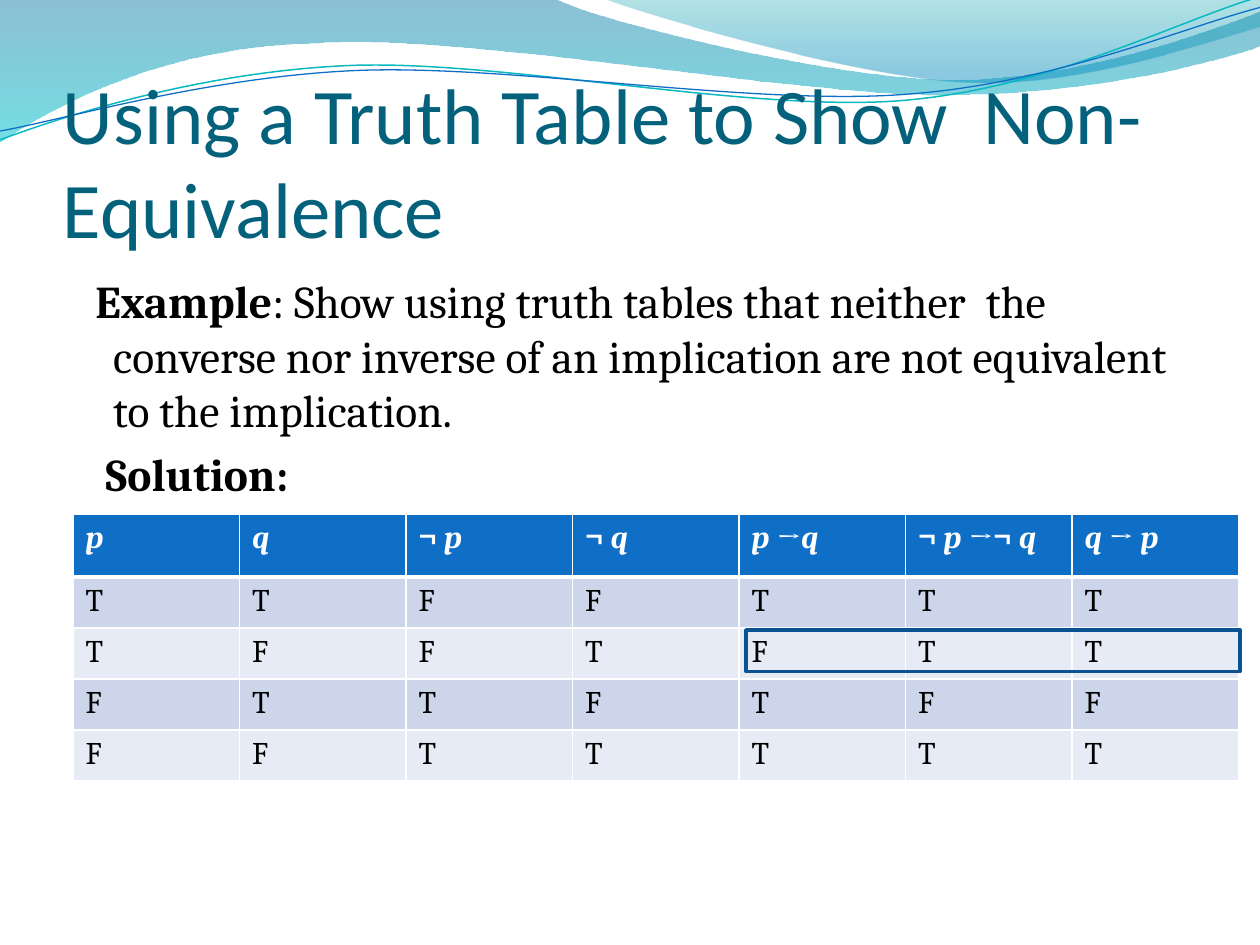
from dataclasses import dataclass
from itertools import product
from math import cos, radians, sin

from lxml import etree
from pptx import Presentation
from pptx.dml.color import RGBColor
from pptx.enum.shapes import MSO_SHAPE
from pptx.enum.text import MSO_ANCHOR
from pptx.oxml.ns import qn
from pptx.util import Inches, Pt

RECT = MSO_SHAPE.RECTANGLE
BOTTOM = MSO_ANCHOR.BOTTOM
TOP = MSO_ANCHOR.TOP


@dataclass(frozen=True)
class Theme:
    head: str = "Calibri"
    body: str = "Cambria"
    title: str = "04617B"
    ink: str = "000000"
    white: str = "FFFFFF"
    blue: str = "0F6FC6"
    teal: str = "0AB8BF"
    frame: str = "0B5292"
    bands: tuple = ("CCD5EA", "E7EBF5")
    wave: tuple = ((0, "0074A1", 45), (1, "00C6CF", 55))
    crest: tuple = ((0, "00A1A9", 30), (0.8, "008BBF", 45))
    big: float = 45
    mid: float = 26
    small: float = 18
    tilt: float = 2.7


def rgb(code):
    return RGBColor.from_string(code)


def pairs(step):
    return list(zip(step[::2], step[1::2]))


def turn(step, mid, angle):
    a = radians(angle)
    out = []
    for x, y in pairs(step):
        dx, dy = x - mid[0], y - mid[1]
        out += [mid[0] + dx * cos(a) - dy * sin(a), mid[1] + dx * sin(a) + dy * cos(a)]
    return out


class Painter:
    def __init__(self, slide, theme):
        self.slide = slide
        self.theme = theme

    def outline(self, start, steps, closed):
        pen = self.slide.shapes.build_freeform(*[Inches(n) for n in start])
        points = [point for step in steps for point in pairs(step)]
        pen.add_line_segments([(Inches(x), Inches(y)) for x, y in points], close=closed)
        shape = pen.convert_to_shape()
        shape.shadow.inherit = False
        lines = iter(list(shape.element.spPr.iter(qn("a:lnTo"))))
        for step in steps:
            group = [next(lines) for point in pairs(step)]
            if len(group) == 3:
                bend = etree.Element(qn("a:cubicBezTo"))
                group[0].addprevious(bend)
                for line in group:
                    bend.append(line[0])
                    line.getparent().remove(line)
        return shape

    def wave(self, start, steps, stops):
        shape = self.outline(start, steps, True)
        shape.fill.gradient()
        shape.fill.gradient_angle = 270
        for stop, (place, code, alpha) in zip(shape.fill.gradient_stops, stops):
            stop.position = place
            stop.color.rgb = rgb(code)
        marks = shape.element.spPr.iter(qn("a:srgbClr"))
        for mark, (place, code, alpha) in zip(marks, stops):
            etree.SubElement(mark, qn("a:alpha"), val=str(alpha * 1000))
        shape.line.fill.background()

    def curve(self, mid, start, steps, code, width):
        tilt = self.theme.tilt
        flat = [turn(step, mid, tilt) for step in steps]
        shape = self.outline(turn(start, mid, tilt), flat, False)
        shape.rotation = 360 - tilt
        shape.fill.background()
        shape.line.color.rgb = rgb(code)
        shape.line.width = Pt(width)

    def run(self, para, text, size, code, font=None, bold=False, italic=False):
        run = para.add_run()
        run.text = text
        run.font.name = font or self.theme.body
        run.font.size = Pt(size)
        run.font.bold = bold
        run.font.italic = italic
        run.font.color.rgb = rgb(code)

    def box(self, left, top, width, height, anchor=TOP):
        spot = [Inches(n) for n in (left, top, width, height)]
        frame = self.slide.shapes.add_textbox(*spot).text_frame
        frame.word_wrap = True
        frame.vertical_anchor = anchor
        return frame

    def title(self, text):
        frame = self.box(0.5, 0.77, 9, 1.25, BOTTOM)
        frame.margin_left = frame.margin_right = frame.margin_bottom = 0
        theme = self.theme
        self.run(frame.paragraphs[0], text, theme.big, theme.title, theme.head)

    def prose(self, items):
        frame = self.box(0.5, 2.12, 9, 4.8)
        for i, (hang, runs) in enumerate(items):
            para = frame.add_paragraph() if i else frame.paragraphs[0]
            para.space_before = Pt(self.theme.mid * 0.2)
            props = para._p.get_or_add_pPr()
            props.set("marL", str(Inches(0.3)))
            props.set("indent", str(Inches(-hang)))
            for text, bold in runs:
                self.run(para, text, self.theme.mid, self.theme.ink, bold=bold)

    def edges(self, cell, widths):
        props = cell._tc.get_or_add_tcPr()
        for i, (side, width) in enumerate(zip("LRTB", widths)):
            line = etree.Element(qn("a:ln" + side), w=str(Pt(width)))
            fill = etree.SubElement(line, qn("a:solidFill"))
            etree.SubElement(fill, qn("a:srgbClr"), val=self.theme.white)
            props.insert(i, line)

    def table(self, heads, rows):
        theme = self.theme
        spot = [Inches(n) for n in (0.58, 4.08, 9.25, 2.12)]
        grid = self.slide.shapes.add_table(len(rows) + 1, len(heads), *spot).table
        grid.horz_banding = False
        for col in grid.columns:
            col.width = Inches(9.25 / len(heads))
        for r, row in enumerate([heads] + rows):
            grid.rows[r].height = Inches(1.62 / len(rows) if r else 0.5)
            for c, text in enumerate(row):
                cell = grid.cell(r, c)
                cell.fill.solid()
                cell.fill.fore_color.rgb = rgb(theme.bands[(r - 1) % 2] if r else theme.blue)
                self.edges(cell, (1, 1, 3 if r == 1 else 1, 1 if r else 3))
                para = cell.text_frame.paragraphs[0]
                if r:
                    self.run(para, text, theme.small, theme.ink)
                    continue
                for part in text:
                    slant = part[0] in "pq"
                    self.run(para, part, theme.small, theme.white, bold=True, italic=slant)

    def frame(self, left, top, width, height):
        spot = [Inches(n) for n in (left, top, width, height)]
        shape = self.slide.shapes.add_shape(RECT, *spot)
        shape.shadow.inherit = False
        shape.fill.background()
        shape.line.color.rgb = rgb(self.theme.frame)
        shape.line.width = Pt(2)


def main():
    deck = Presentation()
    deck.slide_width, deck.slide_height = Inches(10), Inches(7.5)
    theme = Theme()
    art = Painter(deck.slides.add_slide(deck.slide_layouts[6]), theme)

    art.wave((0, 0), [
        (4.4, -0.01), (4.76, 0.17, 6.64, 0.63, 7.58, 0.63),
        (8.53, 0.63, 9.58, 0.26, 10, 0.09), (10.01, 0.36),
        (9.83, 0.44, 8.7, 0.76, 7.46, 0.75), (6.22, 0.75, 3.82, 0.28, 2.57, 0.34),
        (1.29, 0.36, 0.46, 0.83, -0.01, 1.13)], theme.wave)
    art.wave((4.79, -0.01), [
        (5.09, 0.11, 6.82, 0.62, 7.69, 0.65),
        (8.56, 0.69, 9.61, 0.32, 10, 0.21), (10, 0)], theme.crest)
    art.curve((4.99, 0.58), (0, 1.11), [
        (0.48, 0.93, 1.58, 0.57, 2.77, 0.52), (3.95, 0.47, 5.93, 0.89, 7.13, 0.8),
        (8.33, 0.71, 9.38, 0.15, 9.98, -0.02)], theme.teal, 0.85)
    art.curve((5, 0.59), (0, 1.04), [
        (0.47, 0.96, 1.64, 0.61, 2.83, 0.56), (4.03, 0.51, 5.97, 0.84, 7.17, 0.75),
        (8.36, 0.67, 9.41, 0.21, 10, 0.06)], theme.blue, 0.75)

    art.title("Using a Truth Table to Show  Non-Equivalence")
    art.prose([
        (0.14, [("Example", True), (
            ": Show using truth tables that neither  the converse nor inverse "
            "of an implication are not equivalent to the implication.", False)]),
        (0.06, [("Solution:", True)])])

    heads = [["p"], ["q"], ["¬ ", "p"], ["¬ ", "q"], ["p ", "→", "q"],
             ["¬ ", "p ", "→¬ ", "q"], ["q ", "→ ", "p"]]
    rows = []
    for p, q in product((True, False), repeat=2):
        facts = (p, q, not p, not q, not p or q, p or not q, not q or p)
        rows.append(["T" if fact else "F" for fact in facts])
    art.table(heads, rows)
    art.frame(5.92, 5, 3.92, 0.33)
    deck.save("out.pptx")


if __name__ == "__main__":
    main()
